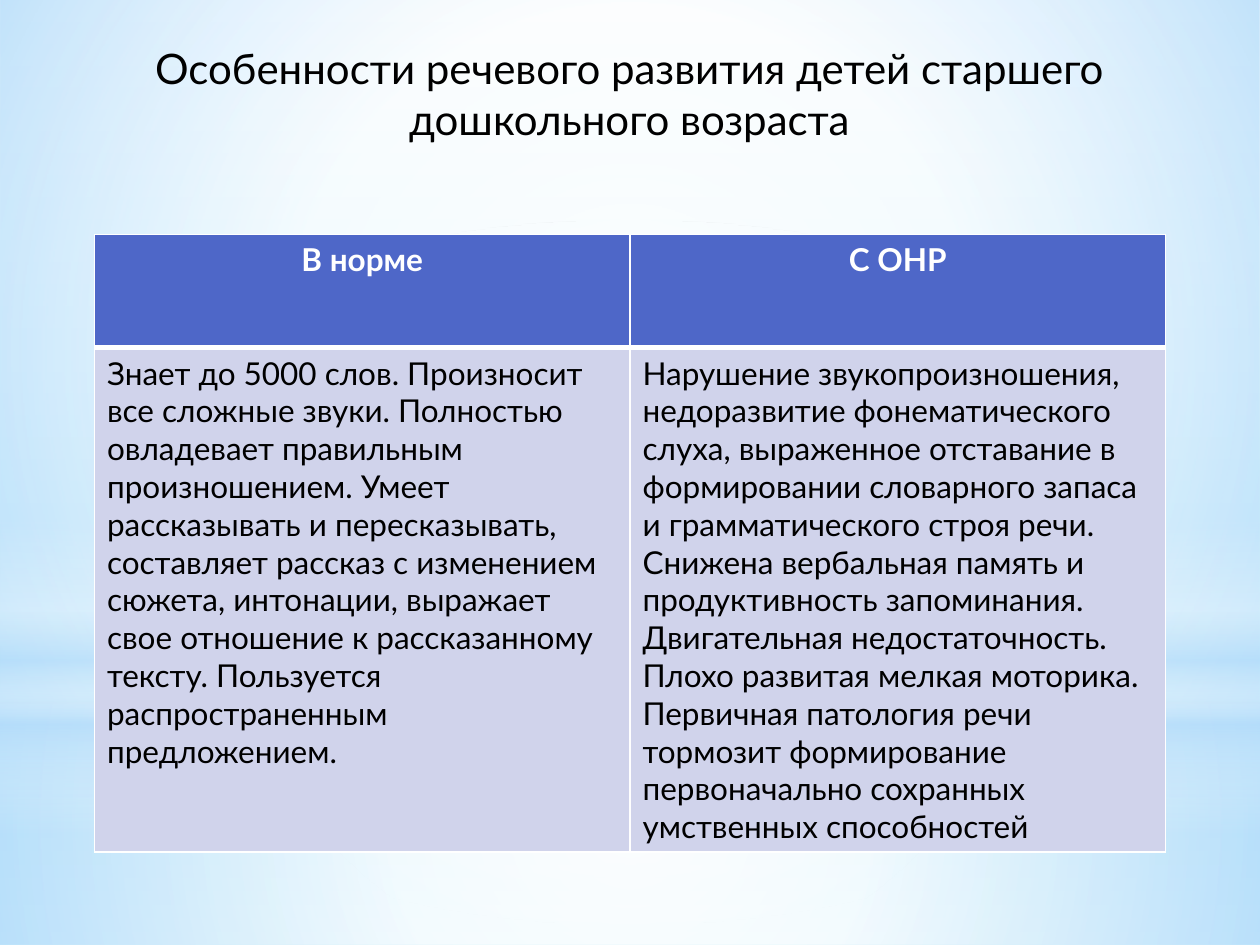
from typing import NamedTuple

from lxml import etree
from pptx import Presentation
from pptx.dml.color import RGBColor
from pptx.enum.shapes import MSO_SHAPE as Shape
from pptx.enum.text import PP_ALIGN as Align
from pptx.oxml import parse_xml
from pptx.oxml.ns import nsdecls, qn
from pptx.util import Inches, Pt

FONT = "Lato"
COLORS = {
    "white": "FFFFFF",
    "black": "000000",
    "haze": "B4DCFA",
    "sky_top": "F7FCFE",
    "sky": "B7E8FA",
    "sky_bottom": "CFF0FB",
    "header": "4E67C8",
    "body": "D0D3EB",
}


class Stop(NamedTuple):
    position: int
    color: str
    opacity: int = 100


class Glow(NamedTuple):
    kind: Shape
    top: float
    height: float
    stops: list[Stop]
    radial: bool = True


class Column(NamedTuple):
    heading: str
    description: str


SKY = [Stop(0, "sky_top"), Stop(74, "sky"), Stop(83, "sky"), Stop(100, "sky_bottom")]
GLOWS = [
    Glow(Shape.RECTANGLE, 5.58, 1.92,
         [Stop(0, "white", 91), Stop(37, "white", 76), Stop(100, "haze", 79)]),
    Glow(Shape.RECTANGLE, 0, 5.58,
         [Stop(0, "white", 89), Stop(48, "white", 62), Stop(100, "haze", 79)]),
    Glow(Shape.RECTANGLE, 4.12, 2.5,
         [Stop(0, "white", 0), Stop(29, "white", 30), Stop(45, "haze", 40),
          Stop(55, "white", 26), Stop(65, "haze", 60), Stop(100, "white", 0)],
         radial=False),
    Glow(Shape.OVAL, 1.75, 5.58, [Stop(0, "white"), Stop(56, "white", 0)]),
]
TITLE = "Особенности речевого развития детей старшего дошкольного возраста"
COLUMNS = [
    Column(
        "В норме",
        "Знает до 5000 слов. Произносит все сложные звуки. Полностью овладевает "
        "правильным произношением. Умеет рассказывать и пересказывать, составляет "
        "рассказ с изменением сюжета, интонации, выражает свое отношение к "
        "рассказанному тексту. Пользуется распространенным предложением.",
    ),
    Column(
        "С ОНР",
        "Нарушение звукопроизношения, недоразвитие фонематического слуха, выраженное "
        "отставание в формировании словарного запаса и грамматического строя речи. "
        "Снижена вербальная память и продуктивность запоминания. Двигательная "
        "недостаточность. Плохо развитая мелкая моторика. Первичная патология речи "
        "тормозит формирование первоначально сохранных умственных способностей",
    ),
]


def rgb(name: str) -> RGBColor:
    return RGBColor.from_string(COLORS[name])


def set_gradient(owner, fill, stops: list[Stop], radial: bool = False) -> None:
    """Put a radial or top-to-bottom gradient in place of the owner's fill."""
    fill.solid()
    solid = owner.element.xpath(".//a:solidFill")[0]
    stop_xml = "".join(
        f'<a:gs pos="{stop.position * 1000}"><a:srgbClr val="{COLORS[stop.color]}">'
        f'<a:alpha val="{stop.opacity * 1000}"/></a:srgbClr></a:gs>'
        for stop in stops
    )
    direction = (
        '<a:path path="circle"><a:fillToRect l="50000" t="50000" r="50000" b="50000"/></a:path>'
        if radial else '<a:lin ang="5400000" scaled="0"/>'
    )
    gradient = parse_xml(
        f'<a:gradFill {nsdecls("a")} rotWithShape="1">'
        f"<a:gsLst>{stop_xml}</a:gsLst>{direction}</a:gradFill>"
    )
    solid.getparent().replace(solid, gradient)


def add_glow(slide, glow: Glow) -> None:
    shape = slide.shapes.add_shape(
        glow.kind, 0, Inches(glow.top), Inches(10), Inches(glow.height))
    shape.shadow.inherit = False
    shape.line.fill.background()
    set_gradient(shape, shape.fill, glow.stops, glow.radial)


def write(frame, text: str, size: int, color: str,
          align: Align = Align.LEFT, bold: bool = False) -> None:
    para = frame.paragraphs[0]
    para.alignment = align
    span = para.add_run()
    span.text = text
    span.font.name = FONT
    span.font.size = Pt(size)
    span.font.bold = bold
    span.font.color.rgb = rgb(color)


def set_borders(cell, top: int, bottom: int) -> None:
    """Draw white cell edges; the lines must come before the fill."""
    properties = cell._tc.get_or_add_tcPr()
    widths = {"lnL": 1, "lnR": 1, "lnT": top, "lnB": bottom}
    for index, (edge, width) in enumerate(widths.items()):
        line = etree.Element(qn(f"a:{edge}"), w=str(Pt(width)))
        solid = etree.SubElement(line, qn("a:solidFill"))
        etree.SubElement(solid, qn("a:srgbClr"), val=COLORS["white"])
        properties.insert(index, line)


def fill_cell(cell, color: str) -> None:
    cell.fill.solid()
    cell.fill.fore_color.rgb = rgb(color)


def add_comparison(slide, columns: list[Column]) -> None:
    table = slide.shapes.add_table(
        2, len(columns), Inches(0.75), Inches(1.86), Inches(8.5), Inches(4.9)).table
    for row, height in zip(table.rows, (0.9, 4)):
        row.height = Inches(height)
    for index, column in enumerate(columns):
        heading, description = table.cell(0, index), table.cell(1, index)
        fill_cell(heading, "header")
        set_borders(heading, top=1, bottom=3)
        write(heading.text_frame, column.heading, 18, "white", Align.CENTER, bold=True)
        fill_cell(description, "body")
        set_borders(description, top=3, bottom=1)
        write(description.text_frame, column.description, 18, "black")


def main() -> None:
    deck = Presentation()
    deck.slide_width, deck.slide_height = Inches(10), Inches(7.5)
    slide = deck.slides.add_slide(deck.slide_layouts[6])
    set_gradient(slide, slide.background.fill, SKY)
    for glow in GLOWS:
        add_glow(slide, glow)
    box = slide.shapes.add_textbox(Inches(0.43), Inches(0.29), Inches(9.13), Inches(0.91))
    box.text_frame.word_wrap = True
    write(box.text_frame, TITLE, 24, "black", Align.CENTER)
    add_comparison(slide, COLUMNS)
    deck.save("out.pptx")


if __name__ == "__main__":
    main()
